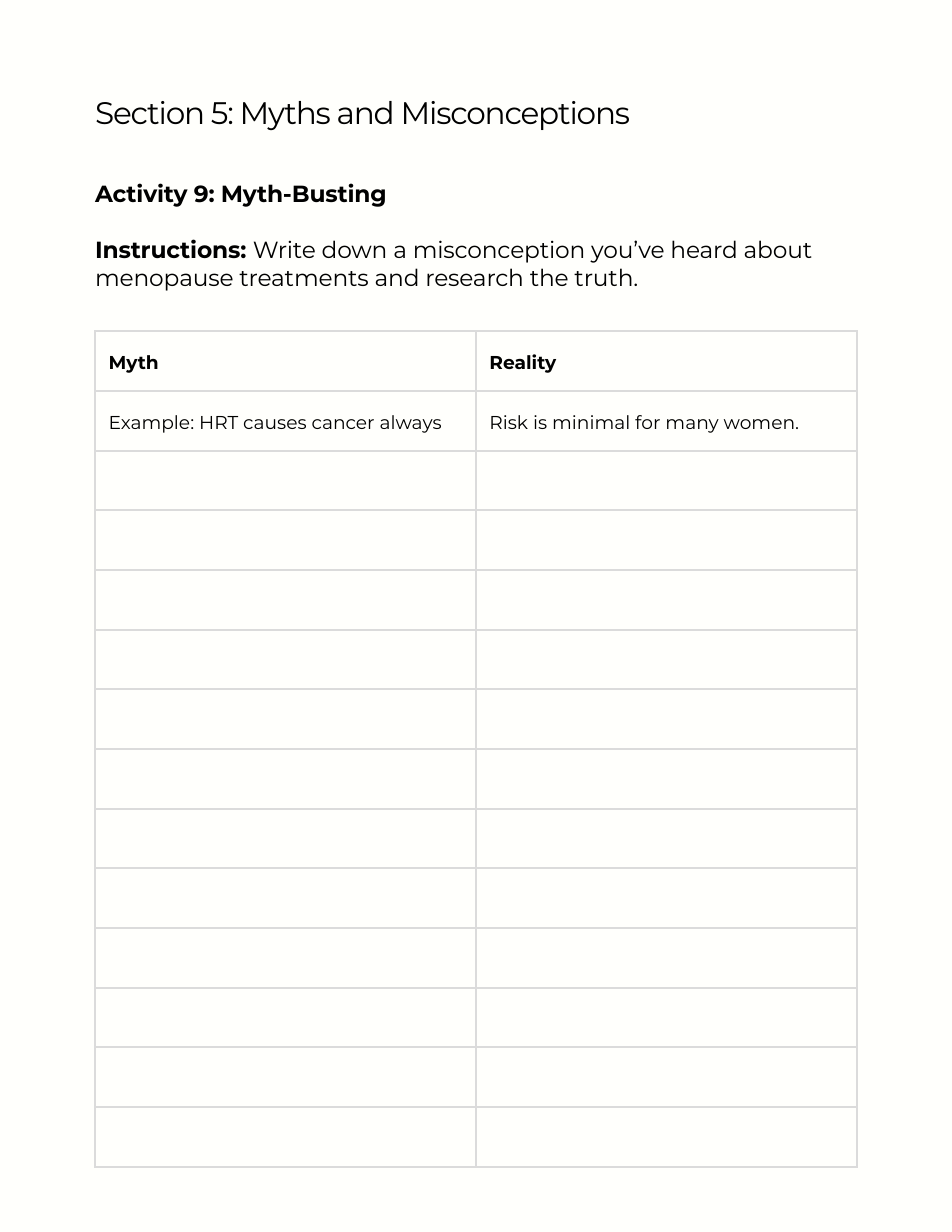
from lxml import etree
from pptx import Presentation
from pptx import util as u
from pptx.dml import color
from pptx.enum import text
from pptx.oxml import ns

COLORS = {"paper": "FFFFFC", "ink": "000000", "rule": "DBDBDB"}
FONT = "Montserrat"
WIDTH, HEIGHT = u.Inches(8.5), u.Inches(11)

# Layout as shares of the slide's size
LEFT, CONTENT_WIDTH = 0.1 * WIDTH, 0.8 * WIDTH
TITLE_TOP, TITLE_HEIGHT = 0.083 * HEIGHT, 0.025 * HEIGHT
ACTIVITY_TOP, ACTIVITY_HEIGHT = 0.1455 * HEIGHT, 0.085 * HEIGHT
TABLE_TOP, TABLE_HEIGHT = 0.269 * HEIGHT, 0.678 * HEIGHT

ROWS, COLUMNS = 14, 2
CELL_MARGIN = u.Inches(0.12)
ENTRIES = [
    ("Myth", "Reality"),
    ("Example: HRT causes cancer always", "Risk is minimal for many women."),
]


def set_format(target, values):
    for name, value in values.items():
        setattr(target, name, value)


def rgb(name):
    return color.RGBColor.from_string(COLORS[name])


def add_run(paragraph, words, size, bold=False, spacing=0):
    """Add a run; spacing is the letter spacing in points."""
    run = paragraph.add_run()
    run.text = words
    set_format(run.font, {"name": FONT, "size": u.Pt(size), "bold": bold})
    run.font.color.rgb = rgb("ink")
    if spacing:
        run.font._element.set("spc", str(round(spacing * 100)))


def add_text(slide, top, height, paragraphs, size, spacing):
    """Add a text box; each paragraph is a list of (words, bold)."""
    box = slide.shapes.add_textbox(*map(int, (LEFT, top, CONTENT_WIDTH, height)))
    frame = box.text_frame
    set_format(frame, {
        "word_wrap": True, "auto_size": text.MSO_AUTO_SIZE.SHAPE_TO_FIT_TEXT,
        "margin_left": 0, "margin_right": 0, "margin_top": 0, "margin_bottom": 0,
    })
    for index, runs in enumerate(paragraphs):
        paragraph = frame.add_paragraph() if index else frame.paragraphs[0]
        paragraph.line_spacing = u.Pt(18)
        if index:
            paragraph.space_before = u.Pt(18)
        for words, bold in runs:
            add_run(paragraph, words, size, bold, spacing)


def add_borders(cell, points):
    properties = cell._tc.get_or_add_tcPr()
    for side in ("lnL", "lnR", "lnT", "lnB"):
        line = etree.SubElement(properties, ns.qn(f"a:{side}"), w=str(u.Pt(points)))
        fill = etree.SubElement(line, ns.qn("a:solidFill"))
        etree.SubElement(fill, ns.qn("a:srgbClr"), val=COLORS["rule"])


def fill_cell(cell, words, bold):
    set_format(cell, {f"margin_{side}": CELL_MARGIN
                      for side in ("left", "right", "top", "bottom")})
    paragraph = cell.text_frame.paragraphs[0]
    paragraph.line_spacing = u.Pt(16.8)
    add_run(paragraph, words, 12, bold)


def add_myth_table(slide):
    frame = slide.shapes.add_table(
        ROWS, COLUMNS, *map(int, (LEFT, TABLE_TOP, CONTENT_WIDTH, TABLE_HEIGHT)))
    table = frame.table
    set_format(table, {"first_row": False, "horz_banding": False})
    for cell in table.iter_cells():
        add_borders(cell, 1.5)
        cell.fill.background()
        cell.vertical_anchor = text.MSO_ANCHOR.MIDDLE
    for row, entry in enumerate(ENTRIES):
        for column, words in enumerate(entry):
            fill_cell(table.cell(row, column), words, bold=row == 0)


def main():
    presentation = Presentation()
    set_format(presentation, {"slide_width": WIDTH, "slide_height": HEIGHT})
    slide = presentation.slides.add_slide(presentation.slide_layouts[6])
    background = slide.background.fill
    background.solid()
    background.fore_color.rgb = rgb("paper")

    # Section title
    add_text(slide, TITLE_TOP, TITLE_HEIGHT,
             [[("Section 5: Myths and Misconceptions", False)]], 20, -0.8)

    # Activity and its instructions
    add_text(slide, ACTIVITY_TOP, ACTIVITY_HEIGHT, [
        [("Activity 9: Myth-Busting", True)],
        [("Instructions: ", True),
         ("Write down a misconception you’ve heard about menopause "
          "treatments and research the truth.", False)],
    ], 15, -0.1)

    # Worksheet with blank rows to write in
    add_myth_table(slide)
    presentation.save("out.pptx")


if __name__ == "__main__":
    main()
